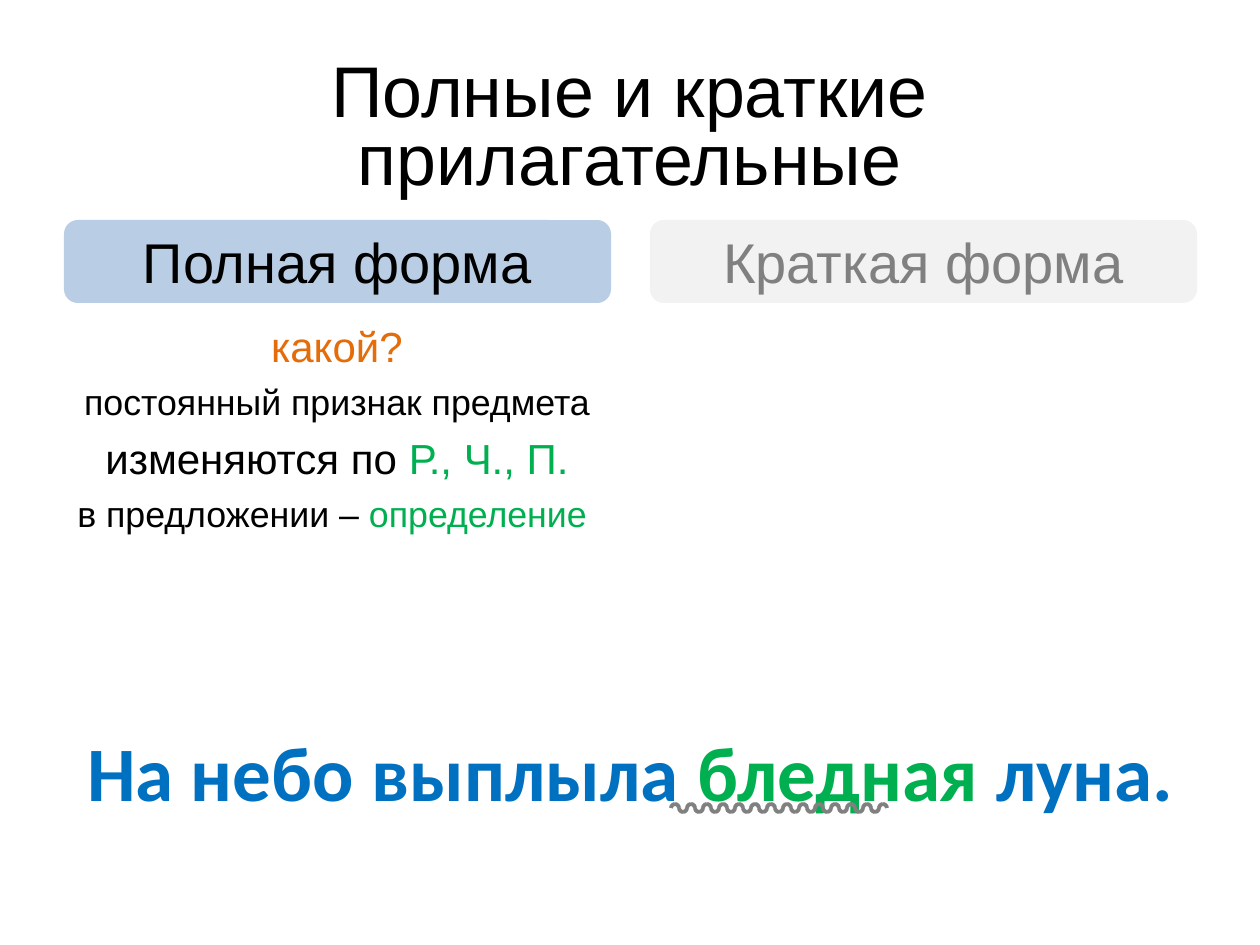
from pptx import Presentation
from pptx.dml.color import RGBColor
from pptx.enum.shapes import MSO_SHAPE
from pptx.enum.text import MSO_ANCHOR, MSO_AUTO_SIZE, PP_ALIGN
from pptx.util import Emu, Pt

ARC, ROUNDED = MSO_SHAPE.ARC, MSO_SHAPE.ROUNDED_RECTANGLE
MIDDLE, CENTER = MSO_ANCHOR.MIDDLE, PP_ALIGN.CENTER
SHRINK = MSO_AUTO_SIZE.TEXT_TO_FIT_SHAPE
PX = 914400 // 126

THEME = {
    "black": "000000", "blue": "0070C0", "green": "00B050",
    "orange": "E46C0A", "gray": "808080",
    "active": "B9CDE5", "inactive": "F2F2F2",
    "title": 44, "heading": 32, "body": 24, "small": 20.4, "sentence": 44,
    "font": "Arial", "sentence_font": "Calibri", "wave": 2.25,
}


def rgb(name):
    return RGBColor.from_string(THEME[name])


def add_text(runs, box, size, fill=None, font="font", bold=False, before=0):
    """Add centred text from (text, colour) runs, on a rounded card if filled."""
    x, y, w, h = [Emu(v * PX) for v in box]
    if fill:
        sp = s.shapes.add_shape(ROUNDED, x, y, w, h)
        sp.shadow.inherit = False
        sp.fill.solid()
        sp.fill.fore_color.rgb = rgb(fill)
        sp.line.fill.background()
    else:
        sp = s.shapes.add_textbox(x, y, w, h)
    tf = sp.text_frame
    tf.word_wrap = True
    tf.vertical_anchor = MIDDLE
    p = tf.paragraphs[0]
    p.alignment = CENTER
    p.space_before = Pt(before * THEME[size])
    for text, color in runs:
        r = p.add_run()
        r.text = text
        r.font.size = Pt(THEME[size])
        r.font.name = THEME[font]
        r.font.bold = bold
        r.font.color.rgb = rgb(color)
    return tf


prs = Presentation()
prs.slide_width, prs.slide_height = Emu(1260 * PX), Emu(945 * PX)
s = prs.slides.add_slide(prs.slide_layouts[6])

# Title, shrunk to fit its box
tf = add_text([("Полные и краткие прилагательные", "black")],
              (63, 38, 1134, 158), "title")
tf.auto_size = SHRINK
tf._txBody.bodyPr.normAutofit.set("fontScale", "90000")

# Column headings
for x, text, color, fill in [(64, "Полная форма", "black", "active"),
                             (650, "Краткая форма", "gray", "inactive")]:
    add_text([(text, color)], (x, 220, 547, 83), "heading", fill=fill, before=0.2)

# Features of the full form
features = [
    ("body", [("какой?", "orange")]),
    ("small", [("постоянный признак предмета", "black")]),
    ("body", [("изменяются по ", "black"), ("Р., Ч., П.", "green")]),
    ("small", [("в предложении – ", "black"), ("определение ", "green")]),
]
for i, (size, runs) in enumerate(features):
    add_text(runs, (63, 304 + 56 * i, 548, 83), size, before=0.2)

# Example sentence
add_text([("На небо выплыла ", "blue"), ("бледная ", "green"), ("луна.", "blue")],
         (64, 713, 1133, 115), "sentence", font="sentence_font", bold=True)

# Wavy underline: quarter arcs paired into alternating crests and troughs
wave = s.shapes.add_group_shape()
for i in range(27):
    for rotation in ((180, 90) if i % 2 else (0, 270)):
        sp = wave.shapes.add_shape(ARC, Emu((671 + 8 * i) * PX), Emu(804 * PX),
                                   Emu(8 * PX), Emu(8 * PX))
        sp.rotation = rotation
        sp.shadow.inherit = False
        sp.fill.background()
        sp.line.color.rgb = rgb("gray")
        sp.line.width = Pt(THEME["wave"])

prs.save("out.pptx")
